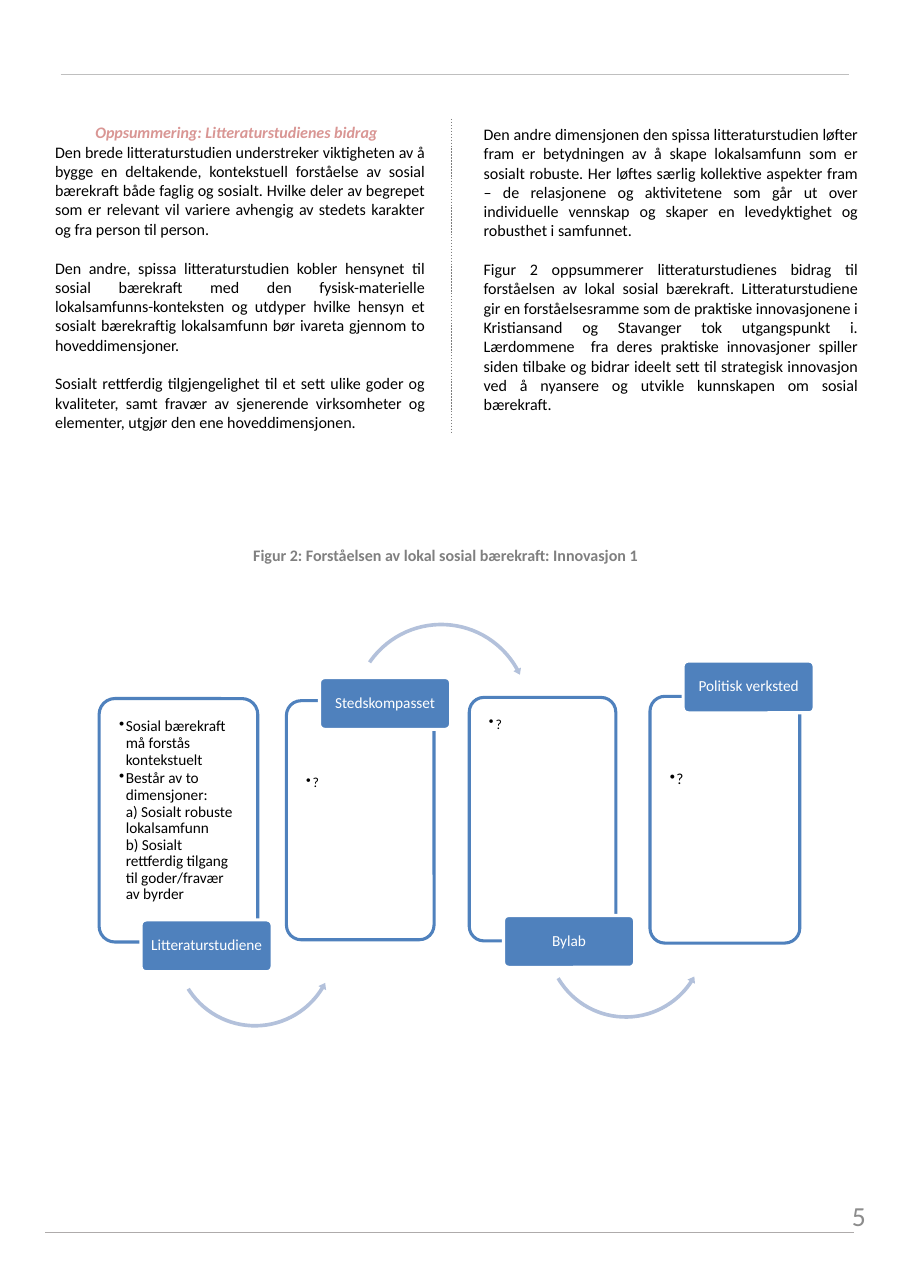
"""Report page: summary in two columns and a four-step figure of social sustainability."""
from dataclasses import dataclass

from lxml.etree import SubElement
from pptx import Presentation
from pptx.dml.color import RGBColor
from pptx.enum.dml import MSO_LINE
from pptx.enum.shapes import MSO_CONNECTOR, MSO_SHAPE
from pptx.enum.text import MSO_ANCHOR, MSO_AUTO_SIZE, PP_ALIGN
from pptx.oxml.ns import qn
from pptx.util import Inches, Pt


@dataclass(frozen=True)
class Theme:
    font: str = "Calibri"
    heading: str = "D99694"
    text: str = "000000"
    caption: str = "808080"
    page: str = "8C8C8C"
    blue: str = "4F81BD"
    arrow: str = "B3C1DB"
    white: str = "FFFFFF"
    body_size: float = 10.5
    figure_size: float = 10
    small_size: float = 9
    page_size: float = 18


T = Theme()

HEADING = ("Oppsummering: Litteraturstudienes bidrag  ", (0.5, 1.1, 3.36, 0.18))
COLUMNS = [
    ((0.5, 1.28, 3.36, 2.66), [
        "Den brede litteraturstudien understreker viktigheten av å bygge en deltakende, "
        "kontekstuell forståelse av sosial bærekraft både faglig og sosialt. Hvilke deler av "
        "begrepet som er relevant vil variere avhengig av stedets karakter og fra person til person.",
        "Den andre, spissa litteraturstudien kobler hensynet til sosial bærekraft med den "
        "fysisk-materielle lokalsamfunns-konteksten og utdyper hvilke hensyn et sosialt "
        "bærekraftig lokalsamfunn bør ivareta gjennom to hoveddimensjoner. ",
        "Sosialt rettferdig tilgjengelighet til et sett ulike goder og kvaliteter, samt fravær av "
        "sjenerende virksomheter og elementer, utgjør den ene hoveddimensjonen."]),
    ((4.39, 1.12, 3.4, 2.66), [
        "Den andre dimensjonen den spissa litteraturstudien løfter fram er betydningen av å skape "
        "lokalsamfunn som er sosialt robuste. Her løftes særlig kollektive aspekter fram – de "
        "relasjonene og aktivitetene som går ut over individuelle vennskap og skaper en "
        "levedyktighet og robusthet i samfunnet. ",
        "Figur 2 oppsummerer litteraturstudienes bidrag til forståelsen av lokal sosial "
        "bærekraft. Litteraturstudiene gir en forståelsesramme som de praktiske innovasjonene i "
        "Kristiansand og Stavanger tok utgangspunkt i. Lærdommene  fra deres praktiske "
        "innovasjoner spiller siden tilbake og bidrar ideelt sett til strategisk innovasjon ved å "
        "nyansere og utvikle kunnskapen om sosial bærekraft."]),
]
CAPTION = ("Figur 2: Forståelsen av lokal sosial bærekraft: Innovasjon 1 ", (2.2, 4.9, 3.81, 0.28))
PAGE = ("5", (5.96, 10.88, 1.9, 0.58))

FINDINGS = [
    "Sosial bærekraft må forstås kontekstuelt",
    "Består av to dimensjoner:\va) Sosialt robuste lokalsamfunn\v"
    "b) Sosialt rettferdig tilgang til goder/fravær av byrder"]
LEFT_ARROW, RIGHT_ARROW = MSO_SHAPE.LEFT_CIRCULAR_ARROW, MSO_SHAPE.CIRCULAR_ARROW
STEPS = [
    dict(name="Litteraturstudiene", points=FINDINGS, size=T.figure_size,
         card=(0.9, 6.34, 1.44, 2.21), label=(1.28, 8.35),
         arrow=(LEFT_ARROW, 1.56, 7.84, 1.51, 25.4, (0.022, 2.632, 3.649, 73.506, 0.026))),
    dict(name="Stedskompasset", points=["?"], size=T.small_size,
         card=(2.6, 6.36, 1.34, 2.17), label=(2.9, 6.15),
         arrow=(RIGHT_ARROW, 3.18, 5.63, 1.65, 343.7, (0.02, 2.391, 208.462, 138.363, 0.023))),
    dict(name="Bylab", points=["?"], size=T.small_size,
         card=(4.26, 6.33, 1.33, 2.21), label=(4.57, 8.31),
         arrow=(LEFT_ARROW, 4.93, 7.77, 1.5, 25, (0.022, 2.649, 4.979, 74.82, 0.026))),
    dict(name="Politisk verksted", points=["?"], size=T.figure_size,
         card=(5.9, 6.32, 1.36, 2.24), label=(6.2, 6), arrow=None),
]
LABEL_SIZE = (1.19, 0.47)
CARD_INSET, LABEL_ROOM = 0.14, 0.5

RULES = [
    ((0.55, 0.68, 7.71, 0.68), "BFBFBF", 0.75, None),
    ((4.1, 1.08, 4.1, 3.92), "7E7E7E", 0.95, MSO_LINE.ROUND_DOT),
    ((0.41, 11.18, 7.75, 11.18), "AEABAB", 0.3, None),
]


def inches(values):
    return [Inches(v) for v in values]


def rgb(code):
    return RGBColor.from_string(code)


def place(sp, box):
    sp.left, sp.top, sp.width, sp.height = inches(box)


def write(sp, lines, size, color, align=PP_ALIGN.LEFT, insets=(0, 0, 0, 0), anchor=MSO_ANCHOR.TOP,
          gap=0, spacing=1, bullet=False, bold=False, italic=False, wrap=True):
    tf = sp.text_frame
    tf.auto_size, tf.word_wrap, tf.vertical_anchor = MSO_AUTO_SIZE.NONE, wrap, anchor
    tf.margin_left, tf.margin_top, tf.margin_right, tf.margin_bottom = inches(insets)
    for i, line in enumerate(lines):
        p = tf.add_paragraph() if i else tf.paragraphs[0]
        p.text = line
        p.alignment, p.line_spacing = align, spacing
        p.space_before, p.space_after = Pt(0), Pt(gap)
        pPr = p._p.get_or_add_pPr()
        indent = Inches(0.06) if bullet else 0
        pPr.set("marL", str(indent))
        pPr.set("indent", str(-indent))
        if bullet:
            SubElement(pPr, qn("a:buChar")).set("char", "•")
        else:
            SubElement(pPr, qn("a:buNone"))
        for r in p.runs:
            r.font.name, r.font.size, r.font.color.rgb = T.font, Pt(size), rgb(color)
            r.font.bold, r.font.italic = bold, italic


def add_block(s, kind, box, fill, line=None):
    sp = s.shapes.add_shape(kind, *inches(box))
    sp.shadow.inherit = False
    sp.fill.solid()
    sp.fill.fore_color.rgb = rgb(fill)
    if line:
        sp.line.color.rgb, sp.line.width = rgb(line), Pt(2)
    else:
        sp.line.fill.background()
    return sp


def add_rounded(s, box, fill, line):
    sp = add_block(s, MSO_SHAPE.ROUNDED_RECTANGLE, box, fill, line)
    sp.adjustments[0] = 0.1
    return sp


def add_arrow(s, kind, left, top, side, turn, shape):
    sp = add_block(s, kind, (left, top, side, side), T.arrow)
    sp.rotation = turn
    for i, value in enumerate(shape):
        sp.adjustments[i] = value


def add_step(s, step):
    card = add_rounded(s, step["card"], T.white, T.blue)
    label_on_top = step["label"][1] < step["card"][1]
    top = CARD_INSET + (LABEL_ROOM if label_on_top else 0)
    write(card, step["points"], step["size"], T.text, insets=(CARD_INSET, top, CARD_INSET, CARD_INSET),
          gap=1.5, spacing=0.9, bullet=True)
    if step["arrow"]:
        add_arrow(s, *step["arrow"])
    label = add_rounded(s, step["label"] + LABEL_SIZE, T.blue, T.white)
    write(label, [step["name"]], T.figure_size, T.white, PP_ALIGN.CENTER,
          (0.02, 0.01, 0.02, 0.01), MSO_ANCHOR.MIDDLE, spacing=0.9)


def add_rule(s, ends, color, width, dash):
    rule = s.shapes.add_connector(MSO_CONNECTOR.STRAIGHT, *inches(ends))
    rule.line.color.rgb, rule.line.width = rgb(color), Pt(width)
    if dash:
        rule.line.dash_style = dash
    SubElement(rule._element.spPr, qn("a:effectLst"))


def main():
    prs = Presentation()
    prs.slide_width, prs.slide_height = inches((8.26, 11.69))
    s = prs.slides.add_slide(prs.slide_layouts[3])
    title, *bodies = s.placeholders
    place(title, HEADING[1])
    write(title, [HEADING[0]], T.body_size, T.heading, PP_ALIGN.CENTER, (0, 0.01, 0, 0),
          bold=True, italic=True)
    for body, (box, lines) in zip(bodies, COLUMNS):
        place(body, box)
        write(body, lines, T.body_size, T.text, PP_ALIGN.JUSTIFY, (0, 0.01, 0, 0), gap=12.8)
    caption = s.shapes.add_textbox(*inches(CAPTION[1]))
    write(caption, [CAPTION[0]], T.body_size, T.caption, insets=(0.1, 0.05, 0.1, 0.05),
          bold=True, wrap=False)
    for step in STEPS:
        add_step(s, step)
    for rule in RULES:
        add_rule(s, *rule)
    page = s.shapes.add_textbox(*inches(PAGE[1]))
    write(page, [PAGE[0]], T.page_size, T.page, PP_ALIGN.RIGHT)
    prs.save("out.pptx")


if __name__ == "__main__":
    main()
